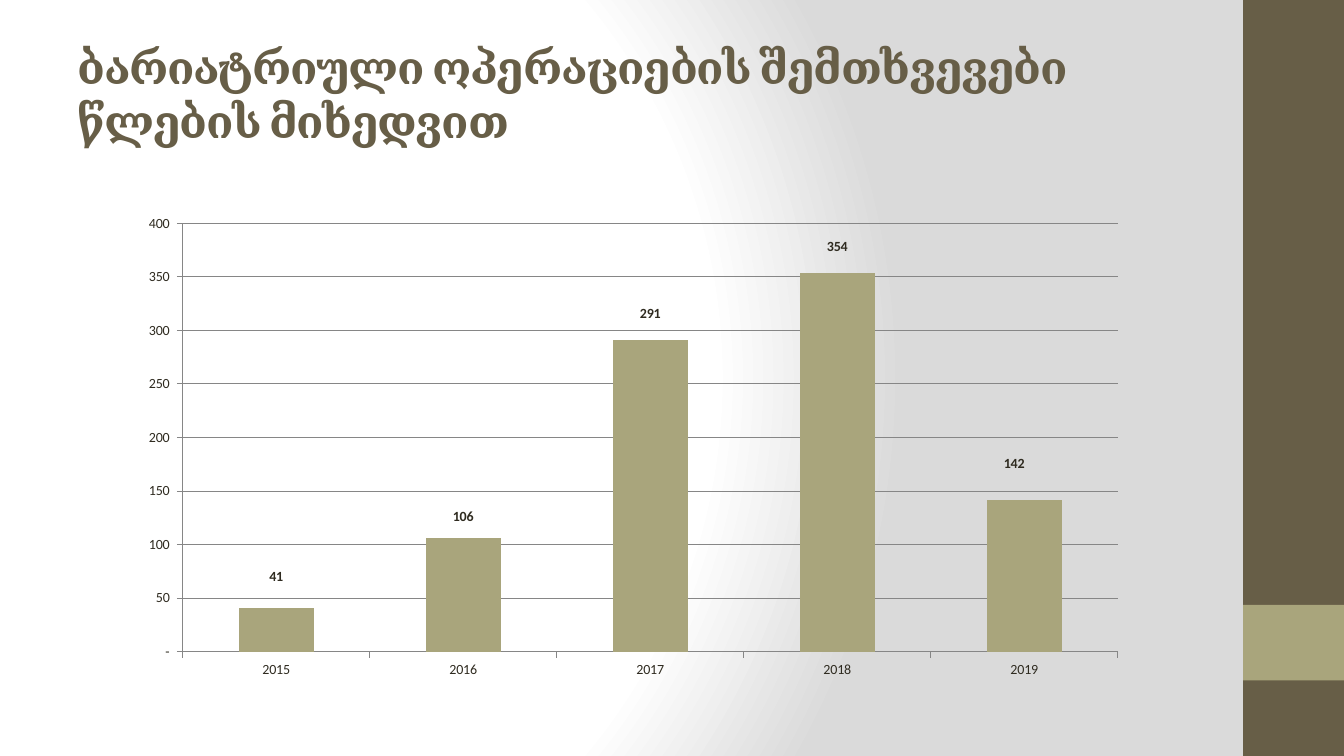
from lxml import etree
from pptx import Presentation
from pptx import util as u
from pptx.chart import data as cd
from pptx.dml.color import RGBColor
from pptx.enum import chart as ec, shapes as es, text as et
from pptx.oxml import ns, parse_xml

Pt = u.Pt
BROWN = RGBColor(0x67, 0x5E, 0x47)
OLIVE = RGBColor(0xA9, 0xA5, 0x7C)
INK = RGBColor(0x2F, 0x2B, 0x20)
GREY = RGBColor(0x86, 0x86, 0x86)
WHITE = RGBColor(0xFF, 0xFF, 0xFF)
SILVER = RGBColor(0xDA, 0xDA, 0xDA)
WIDE, HIGH = 960, 540
FORMAT = r'_(* #,##0_);_(* \(#,##0\);_(* "-"_);_(@_)'
CASES = {"2015": 41, "2016": 106, "2017": 291, "2018": 354, "2019": 142}
SHIFTS = [(0, -0.04), (0, -0.02), (0, -0.03), (0, -0.03), (-0.01, -0.05)]
TITLE = ["ბარიატრიული ოპერაციების შემთხვევები ", "წლების მიხედვით"]


def paint_back(slide):
    """Fill the background with a round gradient."""
    stops = "".join(
        f'<a:gs pos="{pos * 1000}"><a:srgbClr val="{tint}"/></a:gs>'
        for pos, tint in [(0, WHITE), (75, WHITE), (100, SILVER)])
    back = parse_xml(
        f'<p:bg {ns.nsdecls("p", "a")}><p:bgPr><a:gradFill rotWithShape="1">'
        f'<a:gsLst>{stops}</a:gsLst><a:path path="circle">'
        '<a:fillToRect l="20000" t="50000" r="100000" b="50000"/></a:path>'
        '</a:gradFill><a:effectLst/></p:bgPr></p:bg>')
    slide.element.find(ns.qn("p:cSld")).insert(0, back)


def add_band(slide, left, top, width, height):
    """Draw the side band with its lighter block."""
    for y, tall, tint in [(0, height, BROWN), (height * 0.8, height * 0.1, OLIVE)]:
        bar = slide.shapes.add_shape(
            es.MSO_SHAPE.RECTANGLE, Pt(left), Pt(top + y), Pt(width), Pt(tall))
        bar.shadow.inherit = False
        bar.fill.solid()
        bar.fill.fore_color.rgb = tint
        bar.line.fill.background()


def add_title(slide, left, top, width, height):
    """Write the two-line title."""
    box = slide.shapes.add_textbox(Pt(left), Pt(top), Pt(width), Pt(height))
    frame = box.text_frame
    frame.word_wrap = True
    frame.vertical_anchor = et.MSO_ANCHOR.MIDDLE
    para = frame.paragraphs[0]
    for i, line in enumerate(TITLE):
        if i:
            para.add_line_break()
        run = para.add_run()
        run.text = line
        font = run.font
        font.name, font.size, font.bold = "Cambria", Pt(32), True
        font.color.rgb = BROWN
        font._element.set("spc", "-100")


def place(node, index, **spots):
    """Give a chart part a manual layout."""
    layout = etree.Element(ns.qn("c:layout"))
    manual = etree.SubElement(layout, ns.qn("c:manualLayout"))
    for key, val in spots.items():
        etree.SubElement(manual, ns.qn(f"c:{key}")).set("val", str(val))
    for old in node.findall(ns.qn("c:layout")):
        node.remove(old)
    node.insert(index, layout)


def style_axis(axis):
    """Set the tick marks and line of an axis."""
    axis.major_tick_mark = ec.XL_TICK_MARK.OUTSIDE
    axis.minor_tick_mark = ec.XL_TICK_MARK.NONE
    axis.format.line.color.rgb = GREY
    axis.format.line.width = Pt(0.75)


def style_tag(tag):
    """Set place and font of value labels."""
    tag.position = ec.XL_LABEL_POSITION.OUTSIDE_END
    tag.font.name, tag.font.size, tag.font.bold = "Calibri", Pt(10), True
    tag.font.color.rgb = INK


def add_tags(bars):
    """Label the columns, without leader lines."""
    tags = bars.data_labels
    tags.show_value = True
    tags.number_format, tags.number_format_is_linked = FORMAT, False
    style_tag(tags)
    for i in range(len(CASES)):
        style_tag(bars.points[i].data_label)
    group = next(bars._element.iter(ns.qn("c:dLbls")))
    for node, (x, y) in zip(group.findall(ns.qn("c:dLbl")), SHIFTS):
        place(node, 1, x=x, y=y)
    lead = group.find(ns.qn("c:showLeaderLines"))
    if lead is None:
        lead = etree.SubElement(group, ns.qn("c:showLeaderLines"))
    lead.set("val", "0")


def add_bars(slide, left, top, width, height):
    """Build the yearly column chart."""
    data = cd.CategoryChartData(number_format=FORMAT)
    data.categories = list(CASES)
    data.add_series("Series 1", list(CASES.values()))
    chart = slide.shapes.add_chart(
        ec.XL_CHART_TYPE.COLUMN_CLUSTERED,
        Pt(left), Pt(top), Pt(width), Pt(height), data).chart
    chart.has_legend = chart.has_title = False
    chart.font.name, chart.font.size = "Calibri", Pt(10)
    chart.font.color.rgb = INK
    style_axis(chart.category_axis)
    scale = chart.value_axis
    style_axis(scale)
    scale.minimum_scale, scale.maximum_scale, scale.major_unit = 0, 400, 50
    scale.has_major_gridlines = True
    scale.major_gridlines.format.line.color.rgb = GREY
    scale.major_gridlines.format.line.width = Pt(0.75)
    scale.tick_labels.number_format = FORMAT
    scale.tick_labels.number_format_is_linked = False

    plot = chart.plots[0]
    plot.gap_width, plot.vary_by_categories = 150, False
    bars = plot.series[0]
    bars.format.fill.solid()
    bars.format.fill.fore_color.rgb = OLIVE
    add_tags(bars)
    area = next(chart.element.iter(ns.qn("c:plotArea")))
    place(area, 0, layoutTarget="inner", xMode="edge", yMode="edge",
          x=40.5 / width, y=12 / height, w=668 / width, h=306 / height)


def main():
    """Build and save the slide."""
    deck = Presentation()
    deck.slide_width, deck.slide_height = Pt(WIDE), Pt(HIGH)
    slide = deck.slides.add_slide(deck.slide_layouts[6])
    paint_back(slide)
    add_band(slide, WIDE - 72, 0, 72, HIGH)
    add_bars(slide, 90, 147.6, 723.6, 343.44)
    add_title(slide, 48.24, 21.6, 799.92, 90)
    deck.save("out.pptx")


if __name__ == "__main__":
    main()
